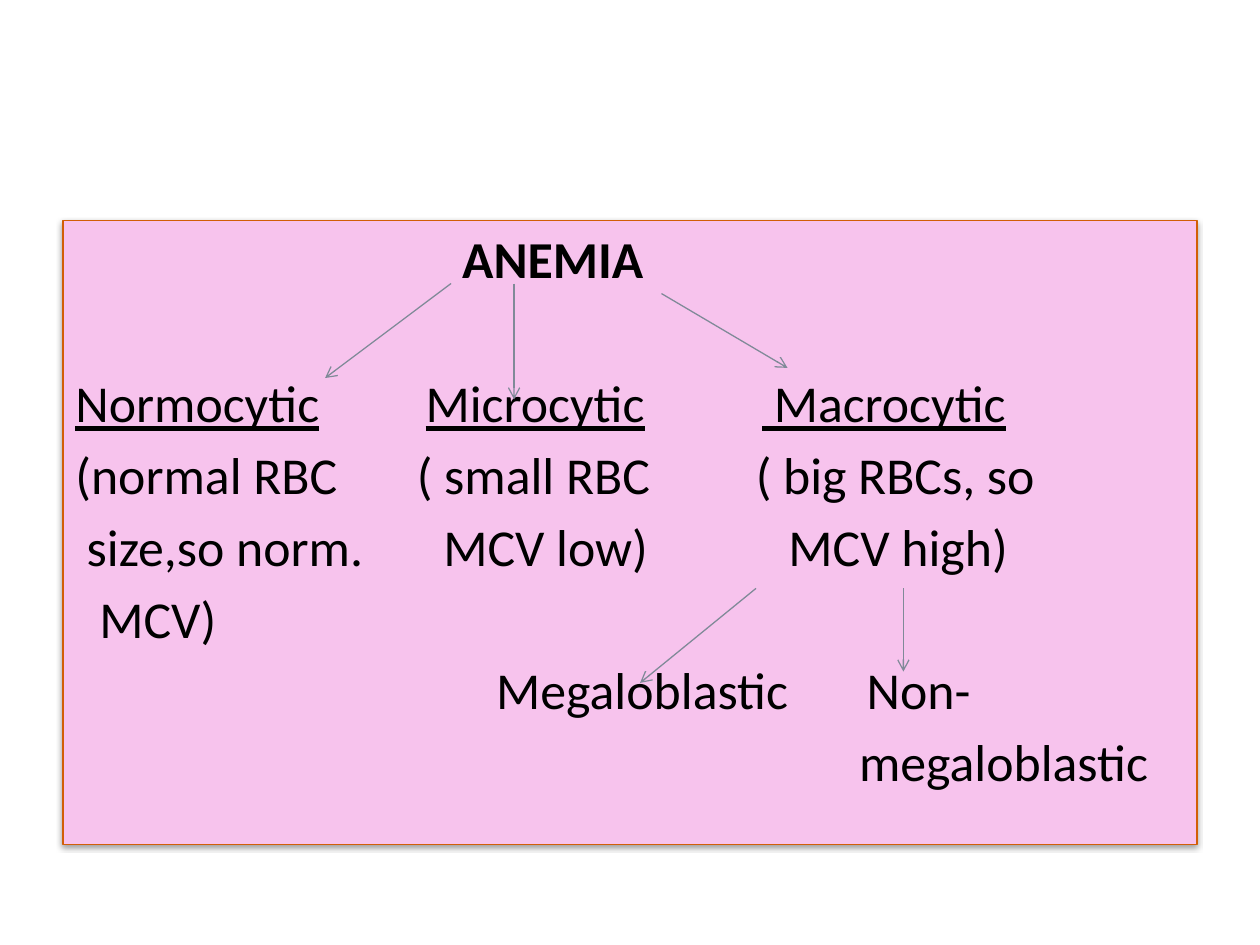
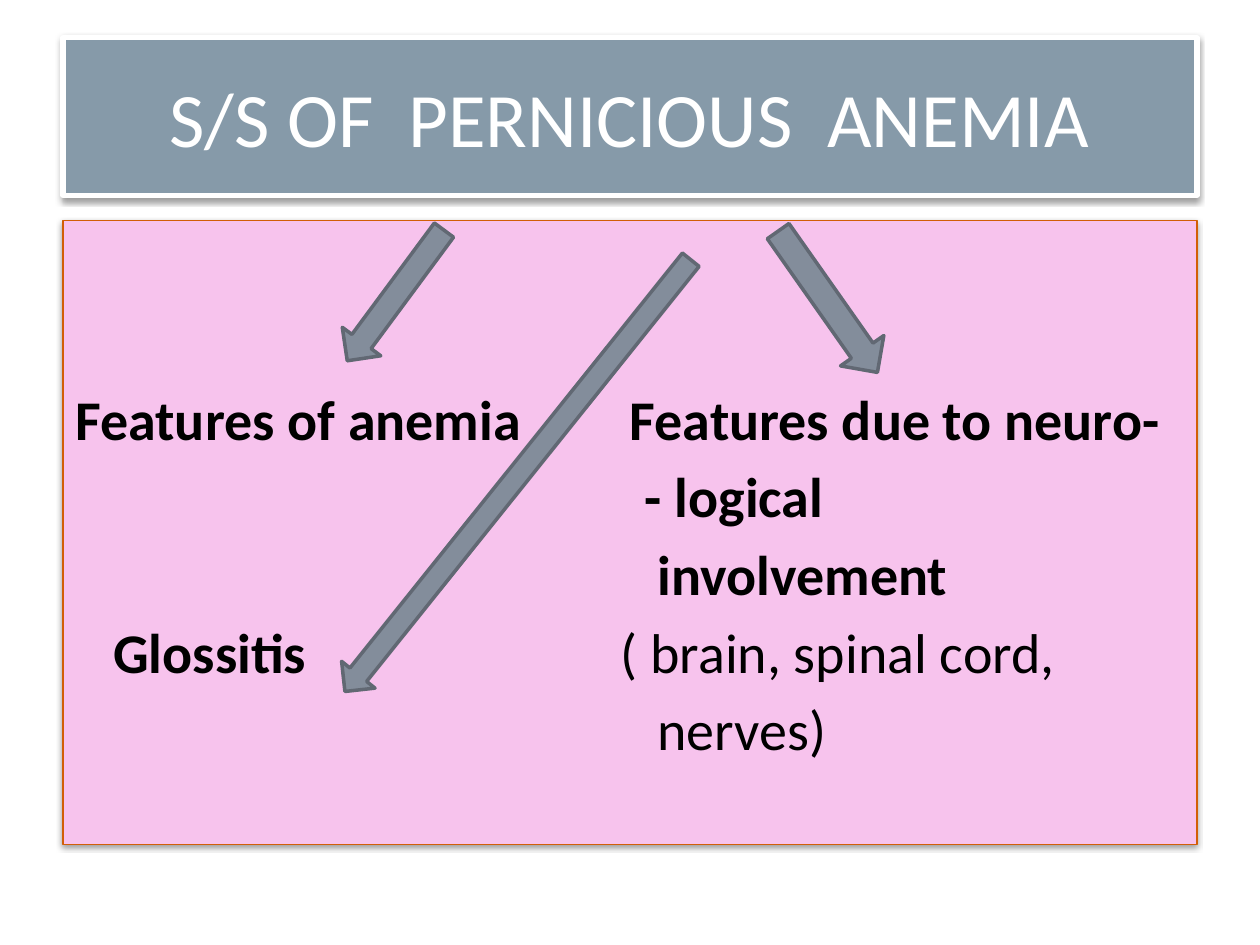
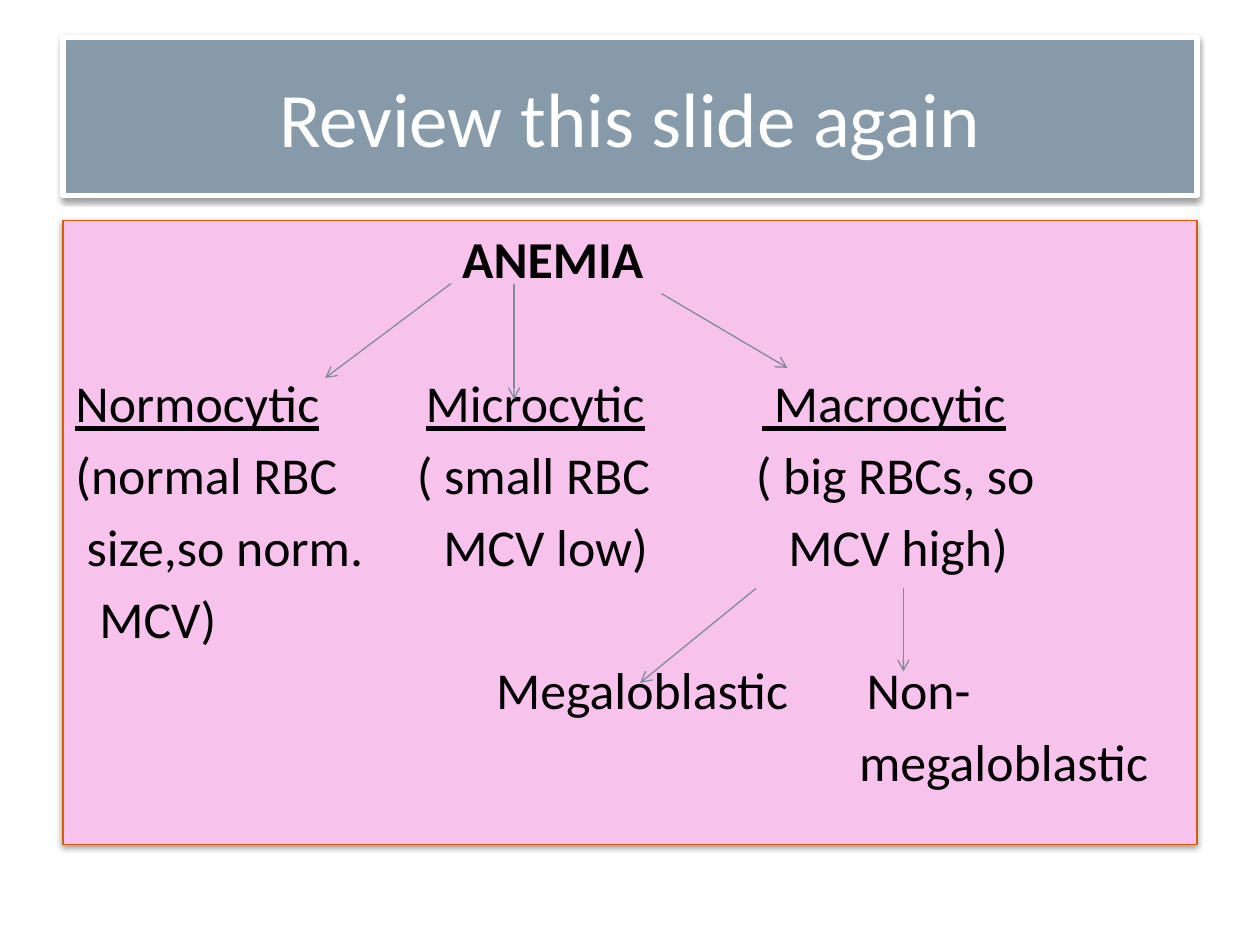
"""Three slides on the types of anemia and the signs of pernicious anemia."""
from lxml.etree import SubElement
from pptx import Presentation
from pptx.dml.color import RGBColor
from pptx.enum.shapes import MSO_CONNECTOR as Connector, MSO_SHAPE as Preset
from pptx.enum.text import MSO_ANCHOR as Anchor, PP_ALIGN as Align
from pptx.oxml.ns import qn
from pptx.util import Inches, Pt

COLORS = {
    "title": "869AA9", "white": "FFFFFF", "panel": "F7C3ED", "border": "D25E07",
    "text": "000000", "line": "808A98", "arrow": "838D9B", "outline": "616873",
}
BOLD = {"bold": True}
UNDERLINED = {"underline": True}
PLAIN = {}

TYPES_ROWS = [
    (0, [(3.07, "ANEMIA", BOLD)]),
    (1, [(0, "Normocytic", UNDERLINED), (2.78, "Microcytic", UNDERLINED),
         (5.45, " Macrocytic", UNDERLINED)]),
    (0, [(0, "(normal RBC", PLAIN), (2.71, "( small RBC", PLAIN),
         (5.4, "( big RBCs, so", PLAIN)]),
    (0, [(0.09, "size,so norm.", PLAIN), (2.92, "MCV low)", PLAIN),
         (5.66, "MCV high)", PLAIN)]),
    (0, [(0.19, "MCV)", PLAIN)]),
    (0, [(3.34, "Megaloblastic", PLAIN), (6.28, "Non-", PLAIN)]),
    (0, [(6.22, "megaloblastic", PLAIN)]),
]
TYPES_BRANCHES = [
    ((3.58, 2.25), (2.58, 3)),
    ((4.08, 2.25), (4.08, 3.17)),
    ((5.25, 2.33), (6.25, 2.92)),
    ((6, 4.67), (5.08, 5.42)),
    ((7.17, 4.67), (7.17, 5.33)),
]
SIGNS_ROWS = [
    (0, [(0, "Features of anemia", BOLD), (4.4, "Features due to neuro-", BOLD)]),
    (0, [(4.52, "- logical", BOLD)]),
    (0, [(4.62, "involvement", BOLD)]),
    (0, [(0.3, "Glossitis", BOLD), (4.33, "( brain, spinal cord,", PLAIN)]),
    (0, [(4.62, "nerves)", PLAIN)]),
]
SIGNS_ARROWS = [
    ((3.94, 1.58, 0.34, 4.39), 38.7),
    ((2.95, 1.7, 0.38, 1.29), 36.5),
    ((6.36, 1.71, 0.42, 1.37), 324.9),
]


class Deck:
    """Holds the shared style and the slide being built."""

    font = "Calibri"
    gap_ratio = 0.185
    pitch_ratio = 1.405

    def __init__(self):
        self.show = Presentation()
        self.show.slide_width, self.show.slide_height = Inches(10), Inches(7.5)
        self.slide = None

    def new_slide(self):
        self.slide = self.show.slides.add_slide(self.show.slide_layouts[6])

    def color(self, name):
        return RGBColor.from_string(COLORS[name])

    def shape(self, preset, place, fill, line, width):
        box = self.slide.shapes.add_shape(preset, *map(Inches, place))
        box.shadow.inherit = False
        box.fill.solid()
        box.fill.fore_color.rgb = self.color(fill)
        box.line.color.rgb = self.color(line)
        box.line.width = Pt(width)
        return box

    def card(self, place, fill, line, width):
        box = self.shape(Preset.RECTANGLE, place, fill, line, width)
        effects = box.element.spPr.find(qn("a:effectLst"))
        shadow = SubElement(effects, qn("a:outerShdw"), blurRad=str(Pt(3.1)),
                            dist=str(Pt(1.6)), dir="5400000", rotWithShape="0")
        tint = SubElement(shadow, qn("a:srgbClr"), val=COLORS["text"])
        SubElement(tint, qn("a:alpha"), val="38000")
        box.text_frame.word_wrap = True
        return box

    def add_text(self, paragraph, text, size, color, style=PLAIN):
        run = paragraph.add_run()
        run.text = text
        values = {"name": self.font, "size": Pt(size), **style}
        for key, value in values.items():
            setattr(run.font, key, value)
        run.font.color.rgb = self.color(color)

    def title(self, text):
        frame = self.card((0.5, 0.3, 9, 1.25), "title", "white", 3).text_frame
        frame.vertical_anchor = Anchor.MIDDLE
        heading = frame.paragraphs[0]
        heading.alignment = Align.CENTER
        self.add_text(heading, text, 44, "white")

    def panel(self, rows, size, top=0.05):
        frame = self.card((0.5, 1.75, 9, 4.95), "panel", "border", 0.75).text_frame
        frame.vertical_anchor = Anchor.TOP
        frame.margin_top = Inches(top)
        for index, (skipped, cells) in enumerate(rows):
            row = frame.add_paragraph() if index else frame.paragraphs[0]
            row.alignment = Align.LEFT
            gap = size * (self.gap_ratio + skipped * self.pitch_ratio)
            row.space_before = Pt(gap if index else 0)
            self.tab_stops(row, [stop for stop, _, _ in cells if stop])
            for stop, text, style in cells:
                if stop:
                    self.add_text(row, "\t", size, "text")
                self.add_text(row, text, size, "text", style)

    def tab_stops(self, paragraph, stops):
        tabs = SubElement(paragraph._p.get_or_add_pPr(), qn("a:tabLst"))
        for stop in stops:
            SubElement(tabs, qn("a:tab"), pos=str(Inches(stop)), algn="l")

    def branch(self, start, end):
        link = self.slide.shapes.add_connector(
            Connector.STRAIGHT, *map(Inches, start + end))
        link.line.color.rgb = self.color("line")
        link.line.width = Pt(0.75)
        properties = link.element.spPr
        SubElement(properties.find(qn("a:ln")), qn("a:tailEnd"), type="arrow")
        SubElement(properties, qn("a:effectLst"))

    def block_arrow(self, place, angle):
        arrow = self.shape(Preset.DOWN_ARROW, place, "arrow", "outline", 2)
        arrow.rotation = angle


def anemia_types(deck, title=None):
    """Adds the tree of anemia types, with a title if there is one."""
    deck.new_slide()
    if title:
        deck.title(title)
    deck.panel(TYPES_ROWS, 29.6)
    for start, end in TYPES_BRANCHES:
        deck.branch(start, end)


def pernicious_signs(deck):
    """Adds the signs and symptoms of pernicious anemia."""
    deck.new_slide()
    deck.title("S/S OF  PERNICIOUS  ANEMIA")
    deck.panel(SIGNS_ROWS, 32, top=1.3)
    for place, angle in SIGNS_ARROWS:
        deck.block_arrow(place, angle)


def main():
    """Builds and saves the deck."""
    deck = Deck()
    anemia_types(deck)
    pernicious_signs(deck)
    anemia_types(deck, "Review this slide again")
    deck.show.save("out.pptx")


if __name__ == "__main__":
    main()
